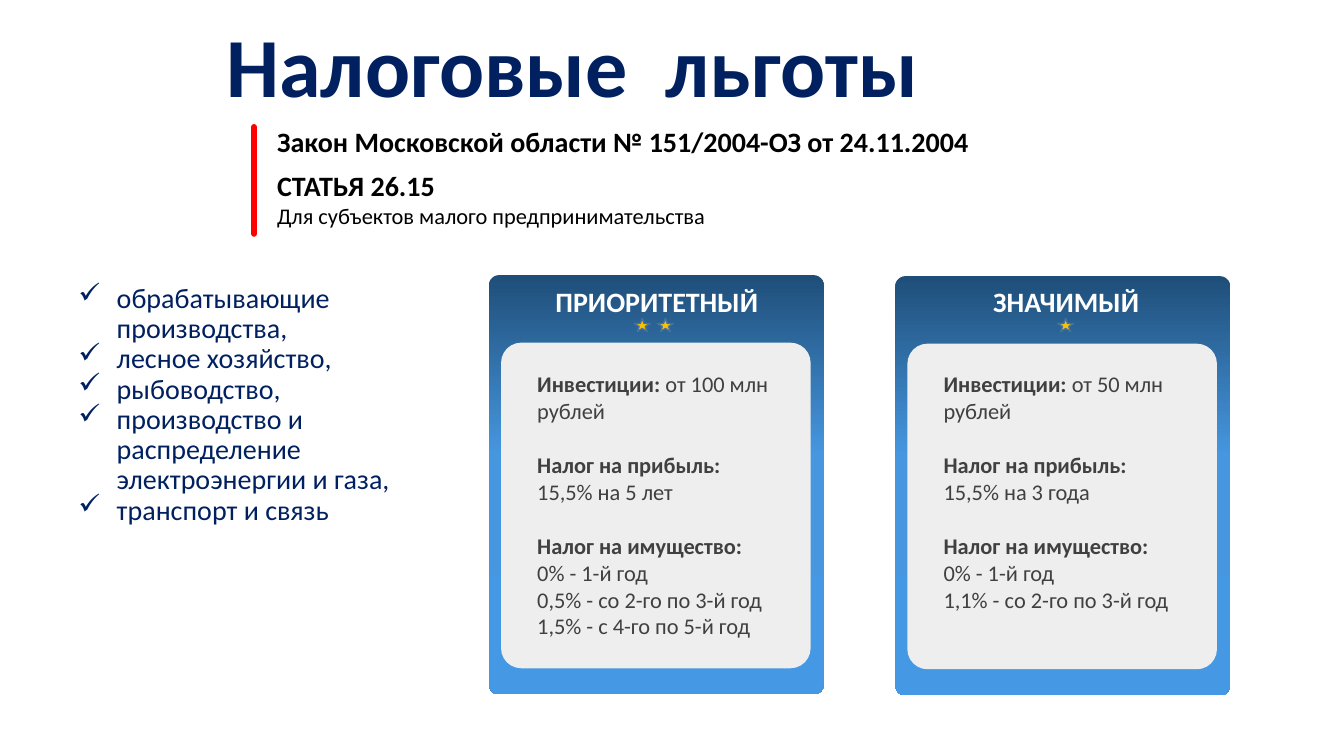
from copy import deepcopy

from lxml import etree
from pptx import Presentation
from pptx.dml.color import RGBColor
from pptx.enum.shapes import MSO_CONNECTOR, MSO_SHAPE
from pptx.enum.text import MSO_ANCHOR, MSO_AUTO_SIZE, PP_ALIGN
from pptx.oxml.ns import qn
from pptx.util import Inches, Pt

ROUNDED = MSO_SHAPE.ROUNDED_RECTANGLE
STAR = MSO_SHAPE.STAR_5_POINT
STRAIGHT = MSO_CONNECTOR.STRAIGHT
LEFT, CENTER = PP_ALIGN.LEFT, PP_ALIGN.CENTER
TOP, BOTTOM = MSO_ANCHOR.TOP, MSO_ANCHOR.BOTTOM
GROW, FIXED = MSO_AUTO_SIZE.SHAPE_TO_FIT_TEXT, MSO_AUTO_SIZE.NONE

NAVY, BLACK, WHITE, GREY = "002060", "000000", "FFFFFF", "404040"
PANEL, RED, GOLD, STAR_EDGE = "EEEEEE", "FF0000", "FFC000", "43739E"
CARD_GRADIENT = [(0, "1F4E79"), (0.43, "4697E0"), (1, "4498E4")]


def rgb(value):
    return RGBColor.from_string(value)


class SlideBuilder:
    font = "Calibri"

    def __init__(self, slide):
        self.slide = slide

    def text(self, box, paragraphs, color, align=LEFT, anchor=TOP,
             fit=GROW, wrap=True, spacing=None, bullet=None):
        frame = self.slide.shapes.add_textbox(*map(Inches, box)).text_frame
        frame.word_wrap = wrap
        frame.auto_size = fit
        frame.vertical_anchor = anchor
        for index, (gap, runs) in enumerate(paragraphs):
            paragraph = frame.paragraphs[0] if index == 0 else frame.add_paragraph()
            paragraph.alignment = align
            if spacing:
                paragraph.line_spacing = spacing
            if gap:
                paragraph.space_before = Pt(gap)
            if bullet:
                self.bullet(paragraph, bullet)
            for words, size, bold in runs:
                run = paragraph.add_run()
                run.text = words
                run.font.name = self.font
                run.font.size = Pt(size)
                run.font.bold = bold
                run.font.color.rgb = rgb(color)

    def bullet(self, paragraph, mark):
        properties = paragraph._p.get_or_add_pPr()
        properties.set("marL", str(Inches(0.38)))
        properties.set("indent", str(-Inches(0.38)))
        etree.SubElement(properties, qn("a:buChar")).set("char", mark)

    def shape(self, kind, box, fill=None, edge=None, rounding=None):
        shape = self.slide.shapes.add_shape(kind, *map(Inches, box))
        shape.shadow.inherit = False
        if rounding is not None:
            shape.adjustments[0] = rounding
        if fill:
            shape.fill.solid()
            shape.fill.fore_color.rgb = rgb(fill)
        if edge:
            shape.line.color.rgb = rgb(edge)
            shape.line.width = Pt(1)
        else:
            shape.line.fill.background()
        return shape

    def gradient_shape(self, kind, box, stops, rounding):
        shape = self.shape(kind, box, rounding=rounding)
        shape.fill.gradient()
        shape.fill.gradient_angle = 270
        stop_list = shape._element.spPr.find(".//" + qn("a:gsLst"))
        while len(stop_list) < len(stops):
            stop_list.append(deepcopy(stop_list[-1]))
        for stop, (position, color) in zip(shape.fill.gradient_stops, stops):
            stop.position = position
            stop.color.rgb = rgb(color)

    def line(self, start, end, color, width):
        line = self.slide.shapes.add_connector(STRAIGHT, *map(Inches, start + end))
        line.line.color.rgb = rgb(color)
        line.line.width = Pt(width)
        line.line._ln.set("cap", "rnd")
        etree.SubElement(line._element.spPr, qn("a:effectLst"))

    def card(self, left, top, name, name_left, stars, investment, profit, property_rates):
        self.gradient_shape(ROUNDED, (left, top, 3.32, 4.16), CARD_GRADIENT, 0.03)
        self.shape(ROUNDED, (left + 0.12, top + 0.67, 3.07, 3.23), PANEL, rounding=0.065)
        self.text((name_left, 2.77, 2.57, 0.44), [(0, [(name, 20, True)])], WHITE, CENTER)
        for star_left in stars:
            self.shape(STAR, (star_left, 3.16, 0.16, 0.13), GOLD, STAR_EDGE)
        terms = [
            (0, [("Инвестиции: ", 16, True), (investment, 16, False)]),
            (19.5, [("Налог на прибыль:", 16, True)]),
            (0, [(profit, 16, False)]),
            (19.5, [("Налог на имущество:", 16, True)]),
        ]
        terms += [(0, [(rate, 16, False)]) for rate in property_rates]
        height = 1.45 + 0.27 * (len(property_rates) + 2)
        self.text((left + 0.38, 3.62, 2.68, height), terms, GREY)


def main():
    presentation = Presentation()
    presentation.slide_width = Inches(13.33)
    presentation.slide_height = Inches(7.5)
    builder = SlideBuilder(presentation.slides.add_slide(presentation.slide_layouts[6]))

    builder.text((0, 0, 11.36, 1.2), [(0, [("Налоговые  льготы", 60, True)])],
                 NAVY, CENTER, BOTTOM, FIXED, spacing=0.9)
    builder.line((2.52, 1.26), (2.52, 2.32), RED, 4.25)
    law = "Закон Московской области № 151/2004-ОЗ от 24.11.2004"
    builder.text((2.65, 1.19, 7.48, 0.44), [(0, [(law, 20, True)])], BLACK)
    article = [
        (0, [("СТАТЬЯ 26.15", 20, True)]),
        (0, [("Для субъектов малого предпринимательства", 16, False)]),
    ]
    builder.text((2.65, 1.62, 4.52, 0.71), article, BLACK, wrap=False)

    industries = [
        "обрабатывающие производства,",
        "лесное хозяйство,",
        "рыбоводство,",
        "производство и распределение электроэнергии и газа,",
        "транспорт и связь",
    ]
    builder.text((0.68, 2.77, 3.76, 4.6),
                 [(0, [(industry, 20, False)]) for industry in industries],
                 NAVY, fit=FIXED, spacing=0.9, bullet="✓")

    builder.card(4.85, 2.73, "ПРИОРИТЕТНЫЙ", 5.23, [6.29, 6.52],
                 "от 100 млн рублей", "15,5% на 5 лет",
                 ["0% - 1-й год", "0,5% - со 2-го по 3-й год", "1,5% - с 4-го по 5-й год"])
    builder.card(8.88, 2.74, "ЗНАЧИМЫЙ", 9.29, [10.49],
                 "от 50 млн рублей", "15,5% на 3 года",
                 ["0% - 1-й год", "1,1% - со 2-го по 3-й год"])

    presentation.save("out.pptx")


if __name__ == "__main__":
    main()
